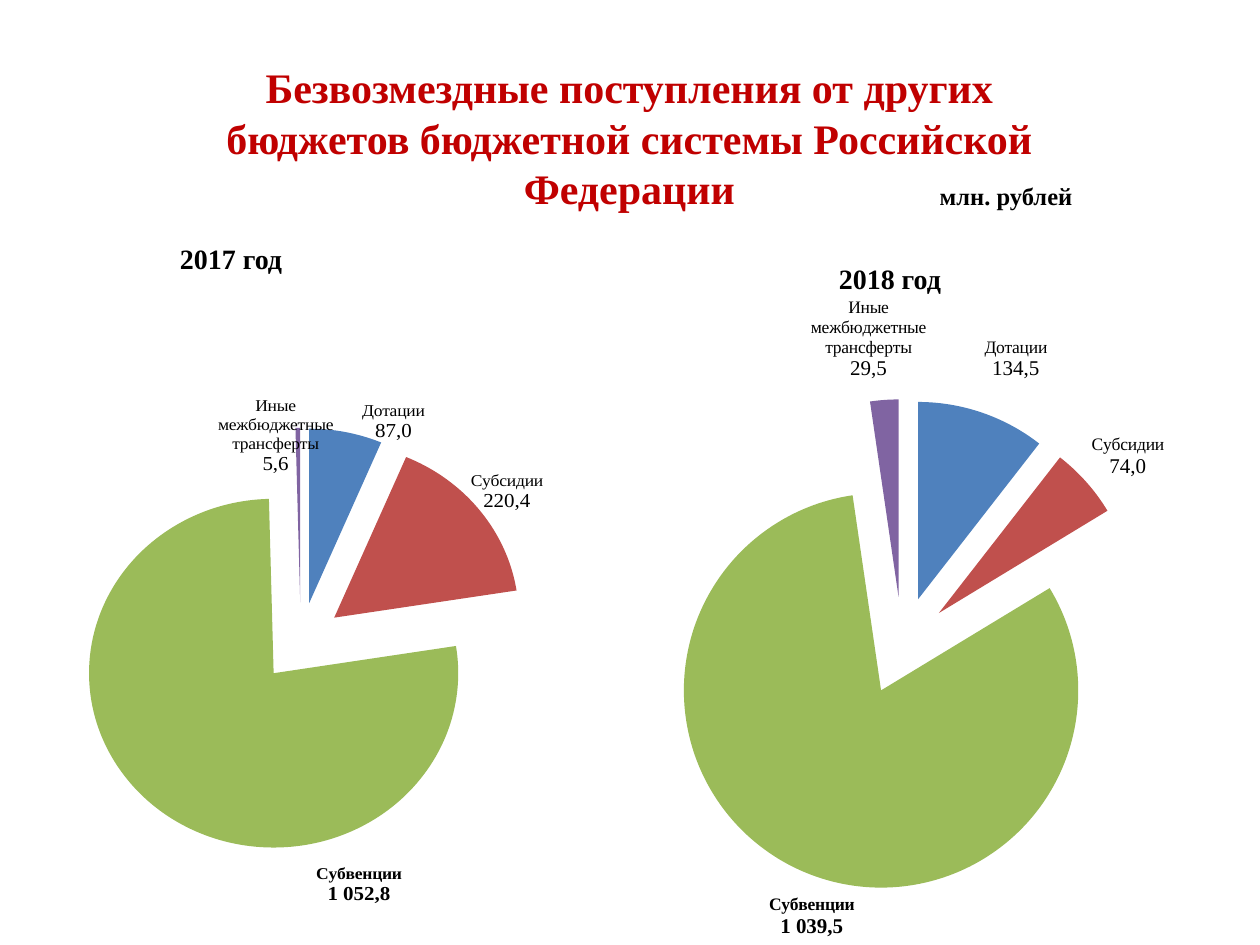
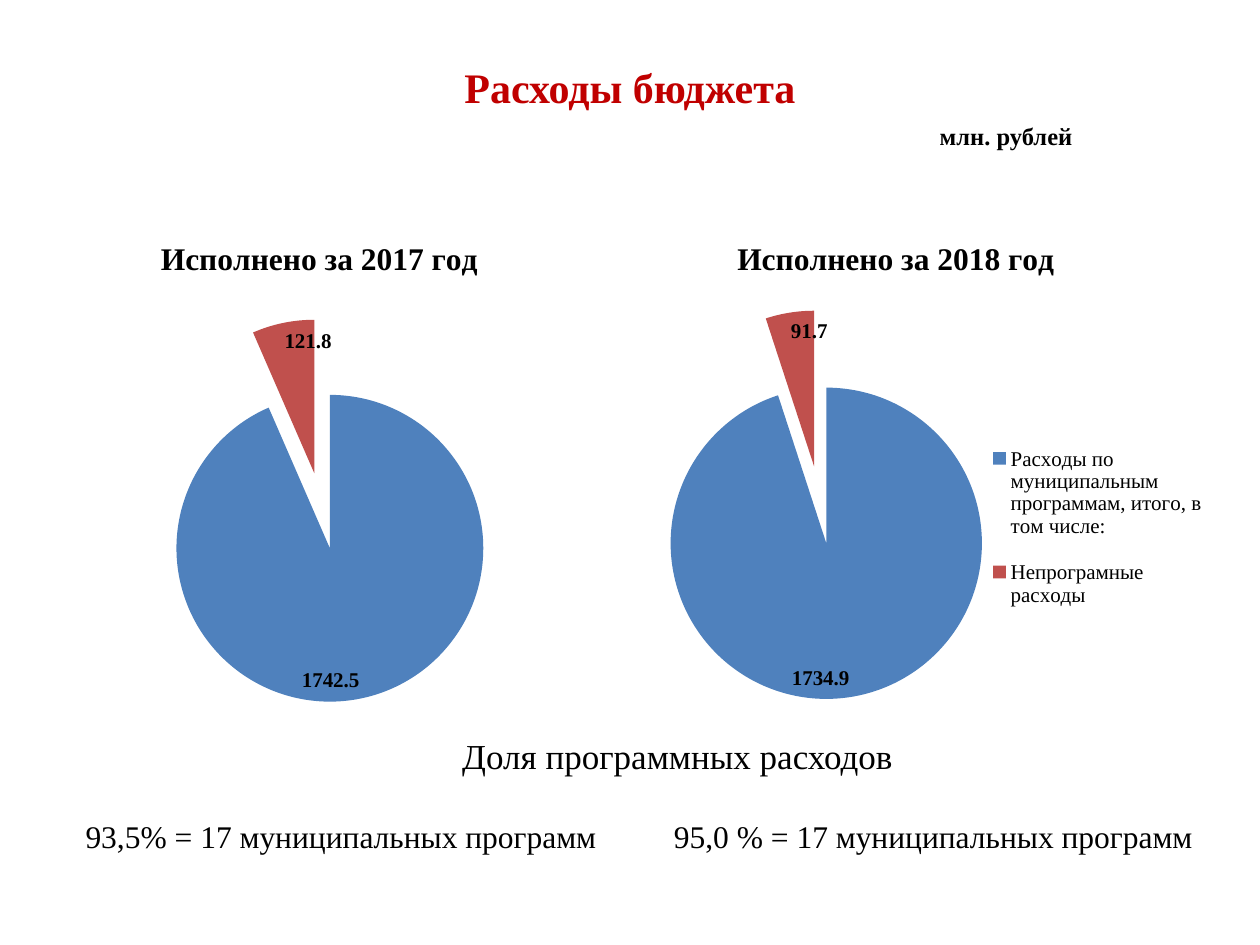
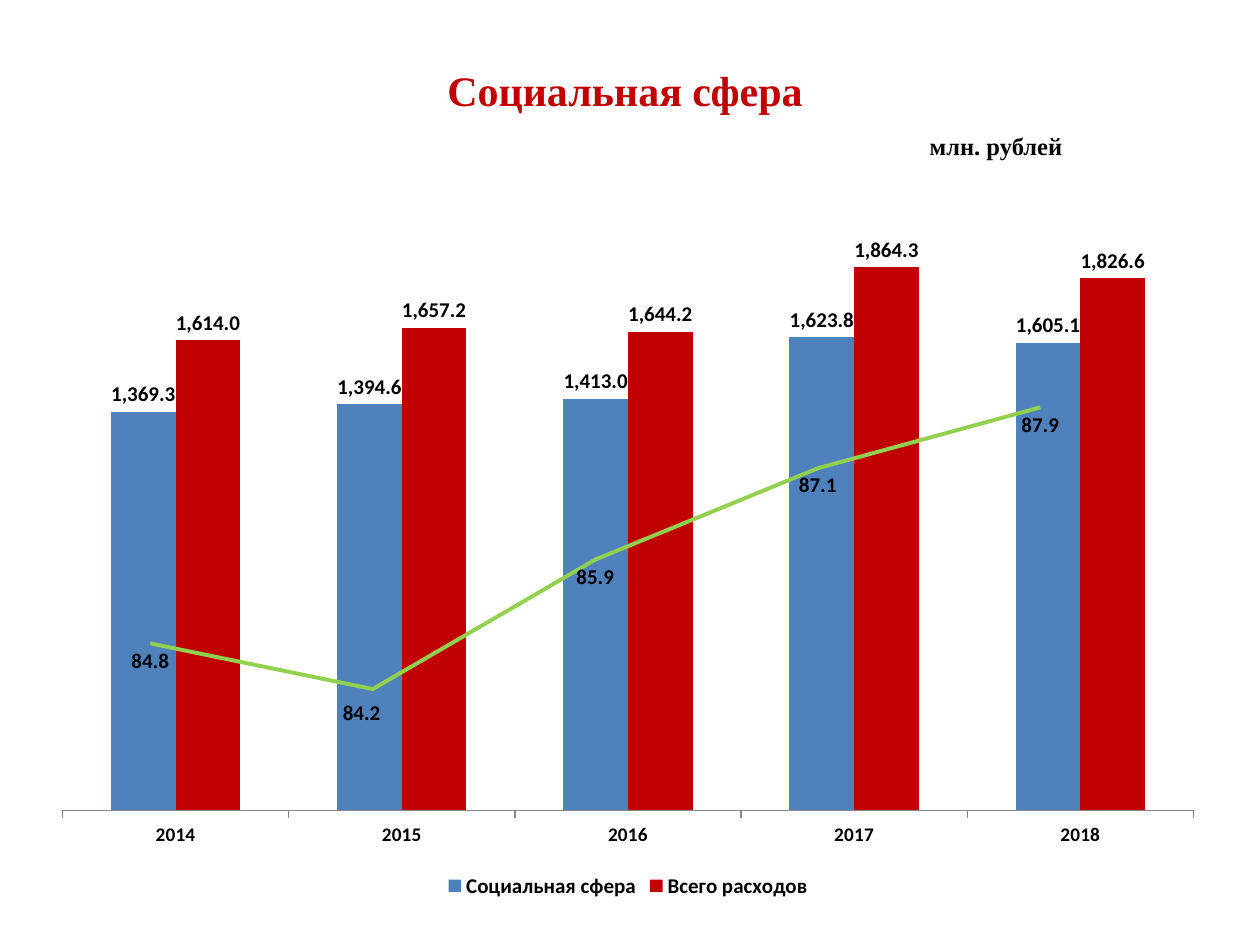
from lxml import etree
from pptx import Presentation
from pptx.chart.data import CategoryChartData
from pptx.dml.color import RGBColor
from pptx.enum.chart import XL_CHART_TYPE as Kind
from pptx.enum.chart import XL_LABEL_POSITION as LabelPos
from pptx.enum.chart import XL_LEGEND_POSITION as LegendPos
from pptx.enum.chart import XL_MARKER_STYLE as Marker
from pptx.enum.chart import XL_TICK_LABEL_POSITION as TickLabels
from pptx.enum.chart import XL_TICK_MARK as Tick
from pptx.enum.text import PP_ALIGN as Align
from pptx.oxml.ns import qn
from pptx.util import Pt

PX = 9144
SERIF, SANS = "Times New Roman", "Calibri"
COLORS = {"title": "C00000", "text": "000000", "blue": "4F81BD", "red": "C0504D",
          "green": "9BBB59", "violet": "8064A2", "share": "92D050", "axis": "878787"}
SLICES = ["blue", "red", "green", "violet"]


def write(paragraph, text, size, bold=False, color="text"):
    run = paragraph.add_run()
    run.text = text
    run.font.size = Pt(size)
    run.font.bold = bold
    run.font.name = SERIF
    run.font.color.rgb = RGBColor.from_string(COLORS[color])


def draw_chart(slide, kind, box, categories, series, font, size, number_format):
    data = CategoryChartData(number_format=number_format)
    data.categories = categories
    for name, values in series:
        data.add_series(name, values)
    chart = slide.shapes.add_chart(kind, *[v * PX for v in box], data).chart
    chart.has_title = False
    chart.has_legend = False
    chart.font.name = font
    chart.font.size = Pt(size)
    chart.font.color.rgb = RGBColor.from_string(COLORS["text"])
    backdrop = etree.Element(qn("c:spPr"))
    etree.SubElement(backdrop, qn("a:noFill"))
    etree.SubElement(etree.SubElement(backdrop, qn("a:ln")), qn("a:noFill"))
    chart.element.find(qn("c:txPr")).addprevious(backdrop)
    chart.plots[0].vary_by_categories = kind == Kind.PIE
    for plotted in chart.plots[0].series:
        labels = plotted.data_labels
        labels.show_value = True
        labels.number_format = number_format
        labels.number_format_is_linked = False
        labels.font.size = Pt(12)
        labels.font.bold = True
        labels.font.name = font
        for leader in chart.element.xpath(".//c:showLeaderLines"):
            leader.set("val", "0")
    return chart


prs = Presentation()
prs.slide_width, prs.slide_height = 1000 * PX, 750 * PX
income, spending, social = [prs.slides.add_slide(prs.slide_layouts[6]) for _ in range(3)]
placements = []
pies = []

captions = [
    (income, (153, 44, 693, 131), 24, "title",
     "Безвозмездные поступления от других бюджетов бюджетной системы Российской Федерации"),
    (income, (736, 139, 137, 34), 14, "text", "млн. рублей"),
    (income, (133, 187, 228, 37), 16, "text", "2017 год"),
    (income, (656, 203, 228, 37), 16, "text", "2018 год"),
    (spending, (185, 44, 630, 51), 24, "title", "Расходы бюджета"),
    (spending, (736, 91, 137, 34), 14, "text", "млн. рублей"),
    (social, (177, 46, 638, 51), 24, "title", "Социальная сфера"),
    (social, (728, 99, 137, 34), 14, "text", "млн. рублей"),
]
for slide, box, size, color, text in captions:
    frame = slide.shapes.add_textbox(*[v * PX for v in box]).text_frame
    frame.word_wrap = True
    paragraph = frame.paragraphs[0]
    paragraph.alignment = Align.CENTER if color == "title" else Align.LEFT
    write(paragraph, text, size, True, color)

transfers = ["Дотации", "Субсидии", "Субвенции", "Иные межбюджетные трансферты"]
income_years = [
    ((-63, 273, 586, 445), 23, [87, 220.4, 1052.8, 5.6],
     ["87,0", "220,4", "1 052,8", "5,6"], (0.1, 0.1, 0.83, 0.81),
     [(0.02, 0.03), (-0.02, 0.01), (0.34, 0.15), (-0.03, 0.1)]),
    ((430, 234, 602, 516), 25, [134.5, 74, 1039.5, 29.5],
     ["134,5", "74,0", "1 039,5", "29,5"], (0.15, 0.16, 0.65, 0.76),
     [(0, -0.04), (0, 0), (0.08, 0.03), (-0.02, -0.02)]),
]
for box, explosion, values, amounts, plot_area, shifts in income_years:
    chart = draw_chart(income, Kind.PIE, box, transfers, [("Поступления", values)],
                       SERIF, 8, "#,##0.0")
    pies.append((chart, explosion))
    placements.append((chart.element.xpath(".//c:plotArea")[0], 0, plot_area))
    receipts = chart.plots[0].series[0]
    receipts.data_labels.show_category_name = True
    for i, (transfer, amount) in enumerate(zip(transfers, amounts)):
        label = receipts.points[i].data_label
        bold = transfer == "Субвенции"
        write(label.text_frame.paragraphs[0], transfer, 10, bold)
        write(label.text_frame.add_paragraph(), amount, 12, bold)
        label.position = LabelPos.OUTSIDE_END
    for label_element, shift in zip(chart.element.xpath(".//c:dLbl"), shifts):
        placements.append((label_element, 1, shift))

programs = ["Расходы по муниципальным программам, итого, в том числе:", "Непрограмные расходы"]
spending_years = [
    ("2018", (461, 172, 500, 391), [1734.9, 91.7], (0.07, 0.19, 0.62, 0.79)),
    ("2017", (31, 172, 445, 406), [1742.5, 121.8], (0.16, 0.2, 0.69, 0.75)),
]
for year, box, values, plot_area in spending_years:
    chart = draw_chart(spending, Kind.PIE, box, programs, [("Расходы", values)],
                       SERIF, 10, "0.0")
    pies.append((chart, 25))
    placements.append((chart.element.xpath(".//c:plotArea")[0], 0, plot_area))
    chart.plots[0].series[0].data_labels.position = LabelPos.INSIDE_END
    chart.has_title = True
    write(chart.chart_title.text_frame.paragraphs[0], f"Исполнено за {year} год", 18, True)
    if year == "2018":
        chart.has_legend = True
        chart.legend.position = LegendPos.RIGHT
        chart.legend.include_in_layout = False
        chart.legend.font.size = Pt(12)
        placements.append((chart.element.xpath(".//c:legend")[0], 1, (0.64, 0.42, 0.36, 0.42)))

for chart, explosion in pies:
    offset = etree.Element(qn("c:explosion"), val=str(explosion))
    chart.element.xpath(".//c:ser/c:tx")[0].addnext(offset)
    pie = chart.plots[0].series[0]
    for i, color in zip(range(len(pie.values)), SLICES):
        fill = pie.points[i].format.fill
        fill.solid()
        fill.fore_color.rgb = RGBColor.from_string(COLORS[color])

frame = spending.shapes.add_textbox(*[v * PX for v in (39, 578, 929, 107)]).text_frame
frame.word_wrap = True
shares = [
    ("\tДоля программных расходов", 20, 0, [318]),
    ("\t93,5% = 17 муниципальных программ\t95,0 % = 17 муниципальных программ", 18, 23,
     [19, 486]),
]
for i, (text, size, gap, stops) in enumerate(shares):
    paragraph = frame.add_paragraph() if i else frame.paragraphs[0]
    paragraph.space_before = Pt(gap)
    tabs = etree.SubElement(paragraph._p.get_or_add_pPr(), qn("a:tabLst"))
    for stop in stops:
        etree.SubElement(tabs, qn("a:tab"), pos=str(stop * PX), algn="l")
    write(paragraph, text, size)

years = ["2014", "2015", "2016", "2017", "2018"]
totals = draw_chart(social, Kind.COLUMN_CLUSTERED, (31, 170, 935, 547), years,
                    [("Социальная сфера", [1369.3, 1394.6, 1413, 1623.8, 1605.1]),
                     ("Всего расходов", [1614, 1657.2, 1644.2, 1864.3, 1826.6])],
                    SANS, 10, "#,##0.0")
totals.plots[0].gap_width = 150
totals.plots[0].overlap = 0
for columns, color in zip(totals.plots[0].series, ["blue", "title"]):
    columns.format.fill.solid()
    columns.format.fill.fore_color.rgb = RGBColor.from_string(COLORS[color])
    columns.data_labels.position = LabelPos.OUTSIDE_END
totals.category_axis.major_tick_mark = Tick.OUTSIDE
totals.category_axis.tick_label_position = TickLabels.LOW
totals.category_axis.tick_labels.font.size = Pt(11)
totals.category_axis.tick_labels.font.bold = True
totals.category_axis.format.line.color.rgb = RGBColor.from_string(COLORS["axis"])
totals.has_legend = True
totals.legend.position = LegendPos.BOTTOM
totals.legend.include_in_layout = False
totals.legend.font.size = Pt(12)
totals.legend.font.bold = True

trend = draw_chart(social, Kind.LINE_STACKED, (31, 164, 883, 516), years,
                   [("Доля социальной сферы", [84.8, 84.2, 85.9, 87.1, 87.9])],
                   SANS, 11, "0.0")
share = trend.plots[0].series[0]
share.smooth = False
share.marker.style = Marker.NONE
share.format.line.color.rgb = RGBColor.from_string(COLORS["share"])
share.format.line.width = Pt(2.25)
share.data_labels.position = LabelPos.BELOW
lowest = share.points[1].data_label
lowest.font.size = Pt(12)
lowest.font.bold = True
lowest.position = LabelPos.BELOW
placements.append((trend.element.xpath(".//c:dLbl")[0], 1, (-0.01, 0.01)))
trend.category_axis.visible = False

for chart, low, high, plot_area in [(totals, 0, 2000, (0.02, 0.02, 0.96, 0.845)),
                                    (trend, 82, 89, (0, 0.18, 1, 0.82))]:
    chart.value_axis.minimum_scale = low
    chart.value_axis.maximum_scale = high
    chart.value_axis.has_major_gridlines = False
    chart.value_axis.visible = False
    placements.append((chart.element.xpath(".//c:plotArea")[0], 0, plot_area))

for owner, index, place in placements:
    for unset in owner.findall(qn("c:layout")):
        owner.remove(unset)
    layout = etree.Element(qn("c:layout"))
    manual = etree.SubElement(layout, qn("c:manualLayout"))
    if index == 0:
        etree.SubElement(manual, qn("c:layoutTarget"), val="inner")
    if len(place) == 4:
        for mode in ("xMode", "yMode"):
            etree.SubElement(manual, qn(f"c:{mode}"), val="edge")
    for side, value in zip("xywh", place):
        etree.SubElement(manual, qn(f"c:{side}"), val=str(value))
    owner.insert(index, layout)

prs.save("out.pptx")
